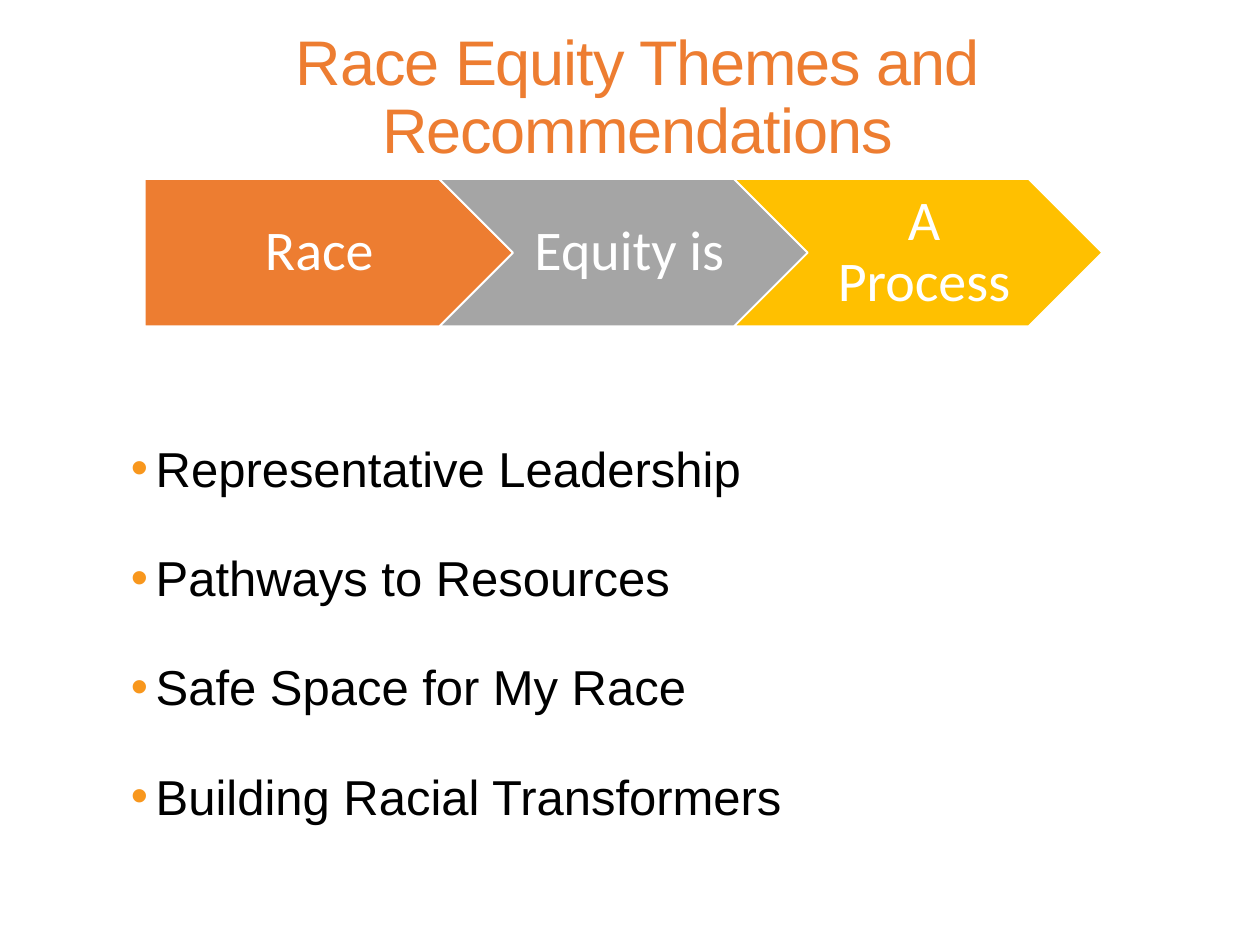
from lxml.etree import SubElement
from pptx import Presentation
from pptx.dml.color import RGBColor
from pptx.enum.shapes import MSO_SHAPE as Shape
from pptx.enum.text import MSO_ANCHOR as Anchor, PP_ALIGN as Align
from pptx.oxml.ns import qn
from pptx.util import Cm, Pt

ORANGE = RGBColor(0xED, 0x7D, 0x31)
GRAY = RGBColor(0xA5, 0xA5, 0xA5)
GOLD = RGBColor(0xFF, 0xC0, 0x00)
WHITE = RGBColor(0xFF, 0xFF, 0xFF)
BLACK = RGBColor(0x00, 0x00, 0x00)
BULLET_COLOR = RGBColor(0xF8, 0x97, 0x1D)

STEPS = [
    ("Race", Shape.PENTAGON, ORANGE, 0.48),
    ("Equity is", Shape.CHEVRON, GRAY, 0.36),
    ("A Process", Shape.CHEVRON, GOLD, 0.36),
]
THEMES = [
    "Representative Leadership",
    "Pathways to Resources",
    "Safe Space for My Race",
    "Building Racial Transformers",
]


class ThemeSlide:
    heading_font = "Arial"
    step_font = "Calibri"

    def __init__(self, presentation):
        self.slide = presentation.slides.add_slide(presentation.slide_layouts[6])

    def format_runs(self, paragraph, font_name, size, color):
        for run in paragraph.runs:
            run.font.name = font_name
            run.font.size = Pt(size)
            run.font.color.rgb = color

    def add_text_frame(self, left, top, width, height):
        box = self.slide.shapes.add_textbox(Cm(left), Cm(top), Cm(width), Cm(height))
        text_frame = box.text_frame
        text_frame.word_wrap = True
        text_frame.vertical_anchor = Anchor.MIDDLE
        return text_frame

    def add_title(self, text, left, top, width, height):
        text_frame = self.add_text_frame(left, top, width, height)
        text_frame.text = text
        paragraph = text_frame.paragraphs[0]
        paragraph.alignment = Align.CENTER
        paragraph.line_spacing = 0.9
        self.format_runs(paragraph, self.heading_font, 36, ORANGE)
        for run in paragraph.runs:
            run.font._element.set("spc", "-60")

    def add_bullets(self, items, left, top, width, height):
        text_frame = self.add_text_frame(left, top, width, height)
        text_frame.text = "\n".join(items)
        for index, paragraph in enumerate(text_frame.paragraphs):
            paragraph.line_spacing = 1.5
            if index:
                paragraph.space_before = Pt(12)
            properties = paragraph._p.get_or_add_pPr()
            properties.set("marL", str(Cm(0.5)))
            properties.set("indent", str(Cm(-0.5)))
            bullet_color = SubElement(properties, qn("a:buClr"))
            SubElement(bullet_color, qn("a:srgbClr"), val=str(BULLET_COLOR))
            SubElement(properties, qn("a:buFont"), typeface=self.heading_font)
            SubElement(properties, qn("a:buChar"), char="•")
            self.format_runs(paragraph, self.heading_font, 28, BLACK)

    def add_step(self, text, kind, color, inset, left, top, width, height):
        shape = self.slide.shapes.add_shape(
            kind, Cm(left), Cm(top), Cm(width), Cm(height))
        shape.shadow.inherit = False
        shape.fill.solid()
        shape.fill.fore_color.rgb = color
        shape.line.color.rgb = WHITE
        shape.line.width = Pt(1)
        text_frame = shape.text_frame
        text_frame.word_wrap = True
        text_frame.vertical_anchor = Anchor.MIDDLE
        text_frame.margin_left = Cm(inset)
        text_frame.margin_right = Cm(0.12)
        text_frame.margin_top = text_frame.margin_bottom = Cm(0.24)
        text_frame.text = text
        paragraph = text_frame.paragraphs[0]
        paragraph.alignment = Align.CENTER
        paragraph.line_spacing = 0.9
        self.format_runs(paragraph, self.step_font, 32, WHITE)


def main():
    presentation = Presentation()
    presentation.slide_width = Cm(25.4)
    presentation.slide_height = Cm(19.05)
    page = ThemeSlide(presentation)
    page.add_title("Race Equity Themes and Recommendations", 1.24, 0.94, 23.22, 2.1)
    page.add_bullets(THEMES, 2.39, 6.28, 21.5, 12.32)
    for index, step in enumerate(STEPS):
        page.add_step(*step, 2.92 + index * 5.94, 3.61, 7.42, 2.97)
    presentation.save("out.pptx")


if __name__ == "__main__":
    main()
